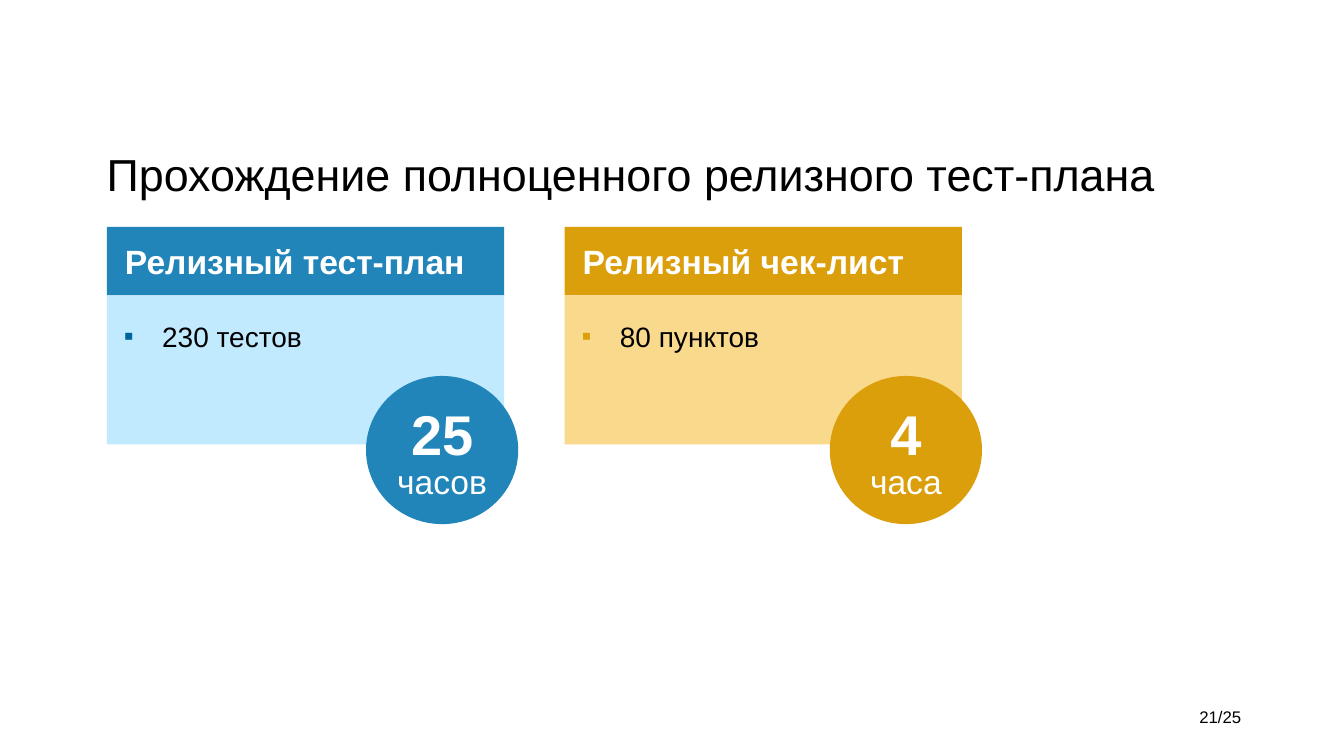
from lxml.etree import SubElement
from pptx import Presentation
from pptx.dml.color import RGBColor
from pptx.enum.shapes import MSO_SHAPE
from pptx.enum.text import MSO_ANCHOR, PP_ALIGN
from pptx.oxml.ns import qn
from pptx.util import Inches, Pt

COLORS = {
    "black": "000000", "white": "FFFFFF", "navy": "006699",
    "blue": "2185BA", "sky": "C1EAFF", "gold": "DC9F0C", "sand": "F9D98C",
}


def rgb(name):
    """Return the named colour."""
    return RGBColor.from_string(COLORS[name])


def block(slide, kind, box, fill):
    """Add a plain filled shape in the box."""
    shape = slide.shapes.add_shape(kind, *map(Inches, box))
    shape.shadow.inherit = False
    shape.fill.solid()
    shape.fill.fore_color.rgb = rgb(fill)
    shape.line.fill.background()
    return shape


def write(frame, text, size, color="black", bold=False,
          align=PP_ALIGN.LEFT, anchor=MSO_ANCHOR.TOP):
    """Fill a text frame with one styled paragraph."""
    frame.word_wrap = True
    frame.vertical_anchor = anchor
    para = frame.paragraphs[0]
    para.text = text
    para.alignment = align
    font = para.font
    font.name, font.size, font.bold = "Arial", Pt(size), bold
    font.color.rgb = rgb(color)
    return para


def label(slide, box, text, size, **style):
    """Add a text box and return its paragraph."""
    shape = slide.shapes.add_textbox(*map(Inches, box))
    return write(shape.text_frame, text, size, **style)


def bullet(slide, box, text, color):
    """Add a line of text with a coloured square bullet."""
    frame = slide.shapes.add_textbox(*map(Inches, box)).text_frame
    props = frame.paragraphs[0]._p.get_or_add_pPr()
    props.set("marL", str(Inches(0.38)))
    props.set("indent", str(Inches(-0.38)))
    tint = SubElement(props, qn("a:buClr"))
    SubElement(tint, qn("a:srgbClr"), val=COLORS[color])
    SubElement(props, qn("a:buFont"), typeface="Arial")
    SubElement(props, qn("a:buChar"), char="▪")
    write(frame, text, 20)


def badge(slide, left, top, count, unit, fill):
    """Draw a circle holding a number over its unit."""
    width = 1.51
    block(slide, MSO_SHAPE.OVAL, (left, top, width, 1.47), fill)
    rows = ((0.35, 0.61, count, 40, True), (0.69, 0.56, unit, 24, False))
    for drop, height, text, size, bold in rows:
        para = label(slide, (left, top + drop, width, height), text, size,
                     color="white", bold=bold, align=PP_ALIGN.CENTER)
        para.line_spacing = Pt(36)


def card(slide, left, top, title, item, dark, light, mark):
    """Draw a titled panel with one bullet."""
    width, head = 3.94, 0.68
    bar = block(slide, MSO_SHAPE.RECTANGLE, (left, top, width, head), dark)
    bar.text_frame.margin_left = Inches(0.18)
    write(bar.text_frame, title, 24, "white", True, anchor=MSO_ANCHOR.MIDDLE)
    block(slide, MSO_SHAPE.RECTANGLE, (left, top + head, width, 1.48), light)
    bullet(slide, (left + 0.07, top + 0.87, 3, 0.44), item, mark)


def build():
    """Build the slide and save it."""
    deck = Presentation()
    deck.slide_width, deck.slide_height = Inches(13.33), Inches(7.5)
    slide = deck.slides.add_slide(deck.slide_layouts[6])
    label(slide, (0.96, 1.36, 11.3, 0.73),
          "Прохождение полноценного релизного тест-плана", 32,
          anchor=MSO_ANCHOR.MIDDLE)
    card(slide, 1.06, 2.25, "Релизный тест-план", "230 тестов",
         "blue", "sky", "navy")
    card(slide, 5.6, 2.25, "Релизный чек-лист", "80 пунктов",
         "gold", "sand", "gold")
    badge(slide, 3.63, 3.73, "25", "часов", "blue")
    badge(slide, 8.23, 3.73, "4", "часа", "gold")
    label(slide, (10.97, 6.97, 1.44, 0.29), "21/25", 12,
          align=PP_ALIGN.RIGHT, anchor=MSO_ANCHOR.BOTTOM)
    deck.save("out.pptx")


if __name__ == "__main__":
    build()
